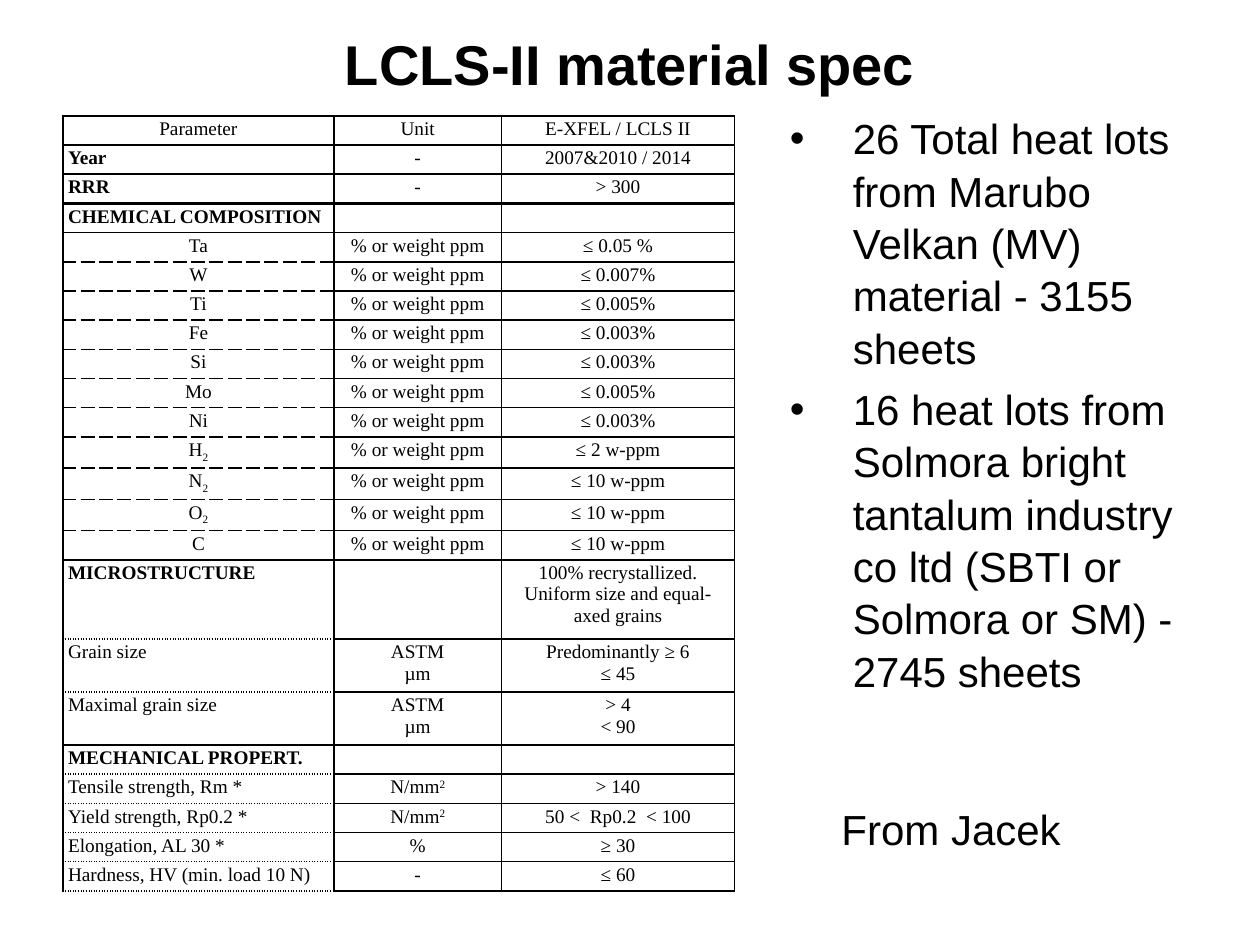
from lxml import etree
from pptx import Presentation
from pptx import util as u
from pptx.dml.color import RGBColor
from pptx.enum import text
from pptx.oxml import ns

BLACK = "000000"
ALIGN = text.PP_ALIGN


def color(value):
    return RGBColor.from_string(value)


def write(paragraph, words, size, name, bold=False):
    """Add a run; '~' starts a subscript and '^' a superscript."""
    mark = next((m for m in "~^" if m in words), None)
    base, _, script = words.partition(mark) if mark else (words, "", "")
    for part in filter(None, (base, script)):
        run = paragraph.add_run()
        run.text = part
        values = {"size": u.Pt(size), "name": name, "bold": bold}
        for key, value in values.items():
            setattr(run.font, key, value)
        run.font.color.rgb = color(BLACK)
        if part is script:
            shift = "-25000" if mark == "~" else "30000"
            run._r.get_or_add_rPr().set("baseline", shift)


presentation = Presentation()
presentation.slide_width, presentation.slide_height = u.Inches(10), u.Inches(7.5)
slide = presentation.slides.add_slide(presentation.slide_layouts[6])

# Title
title = slide.shapes.add_textbox(u.Inches(0.75), 0, u.Inches(8.5), u.Inches(1))
title.text_frame.word_wrap = True
title.text_frame.vertical_anchor = text.MSO_ANCHOR.MIDDLE
title.text_frame.paragraphs[0].alignment = ALIGN.CENTER
write(title.text_frame.paragraphs[0], "LCLS-II material spec", 32, "Arial", True)

# Specification rows: parameter, unit, requirement
limits = [
    ("Ta", "≤ 0.05 %"), ("W", "≤ 0.007%"), ("Ti", "≤ 0.005%"),
    ("Fe", "≤ 0.003%"), ("Si", "≤ 0.003%"), ("Mo", "≤ 0.005%"),
    ("Ni", "≤ 0.003%"), ("H~2", "≤ 2 w-ppm"), ("N~2", "≤ 10 w-ppm"),
    ("O~2", "≤ 10 w-ppm"), ("C", "≤ 10 w-ppm"),
]
rows = [
    ("Parameter", "Unit", "E-XFEL / LCLS II"),
    ("Year", "-", "2007&2010 / 2014"),
    ("RRR", "-", "> 300"),
    ("CHEMICAL COMPOSITION", "", ""),
    *[(element, "% or weight ppm", limit) for element, limit in limits],
    ("MICROSTRUCTURE", "",
     "100% recrystallized. Uniform size and equal-axed grains"),
    ("Grain size", "ASTM\nµm", "Predominantly ≥ 6\n≤ 45"),
    ("Maximal grain size", "ASTM\nµm", "> 4\n< 90"),
    ("MECHANICAL PROPERT.", "", ""),
    ("Tensile strength, Rm *", "N/mm^2", "> 140"),
    ("Yield strength, Rp0.2 *", "N/mm^2", "50 <  Rp0.2  < 100"),
    ("Elongation, AL 30 *", "%", "≥ 30"),
    ("Hardness, HV (min. load 10 N)", "-", "≤ 60"),
]
bold_rows = {1, 2, 3, 15, 18}
centered_rows = {0, *range(4, 15)}
thick_below = {0, 1, 2, 14, 17}
dashed_below = set(range(4, 14))
dotted_below = {15, 16, *range(18, 23)}
tall_rows = {15: 0.63, 16: 0.42, 17: 0.42}
table_height = 6.1
row_height = (table_height - sum(tall_rows.values())) / (len(rows) - len(tall_rows))

# Table
table = slide.shapes.add_table(
    len(rows), 3, u.Inches(0.5), u.Inches(0.92),
    u.Inches(5.33), u.Inches(table_height)).table
table.first_row = table.horz_banding = False
for column, width in zip(table.columns, (2.15, 1.33, 1.85)):
    column.width = u.Inches(width)

margins = {"margin_left": 0.04, "margin_right": 0.04,
           "margin_top": 0.02, "margin_bottom": 0.02}
for i, row in enumerate(rows):
    table.rows[i].height = u.Inches(tall_rows.get(i, row_height))
    for j, words in enumerate(row):
        cell = table.cell(i, j)
        for key, value in margins.items():
            setattr(cell, key, u.Inches(value))

        # Cell text
        for k, line in enumerate(words.split("\n")):
            frame = cell.text_frame
            paragraph = frame.add_paragraph() if k else frame.paragraphs[0]
            centered = j > 0 or i in centered_rows
            paragraph.alignment = ALIGN.CENTER if centered else ALIGN.JUSTIFY
            write(paragraph, line, 11, "Times New Roman", j == 0 and i in bold_rows)
            if not line:
                etree.SubElement(paragraph._p, ns.qn("a:endParaRPr"), sz="1100")

        # Cell borders: a row's top edge is the bottom edge of the row above
        properties = cell._tc.get_or_add_tcPr()
        for side, edge in (("L", None), ("R", None), ("T", i - 1), ("B", i)):
            weight = 1.5 if edge in thick_below else 1
            dash = "solid"
            if j == 0 and edge in dashed_below:
                dash = "dash"
            elif j == 0 and edge in dotted_below:
                dash = "sysDot"
            border = etree.SubElement(
                properties, ns.qn(f"a:ln{side}"), w=str(u.Pt(weight)))
            fill = etree.SubElement(border, ns.qn("a:solidFill"))
            etree.SubElement(fill, ns.qn("a:srgbClr"), val=BLACK)
            etree.SubElement(border, ns.qn("a:prstDash"), val=dash)
        cell.fill.background()

# Source note
note = slide.shapes.add_textbox(
    u.Inches(6.58), u.Inches(6.33), u.Inches(1.96), u.Inches(0.5))
note.text_frame.word_wrap = False
write(note.text_frame.paragraphs[0], "From Jacek", 24, "Arial")

# Supplier bullets
suppliers = [
    "26 Total heat lots from Marubo Velkan (MV) material - 3155 sheets",
    "16 heat lots from Solmora bright tantalum industry co ltd "
    "(SBTI or Solmora or SM) - 2745 sheets",
]
body = slide.shapes.add_textbox(
    u.Inches(6.17), u.Inches(0.83), u.Inches(3.42), u.Inches(5.83))
body.text_frame.word_wrap = True
for i, words in enumerate(suppliers):
    frame = body.text_frame
    paragraph = frame.add_paragraph() if i else frame.paragraphs[0]
    paragraph.line_spacing = 1.04
    if i:
        paragraph.space_before = u.Pt(5)
    properties = paragraph._p.get_or_add_pPr()
    properties.set("marL", str(u.Inches(0.5)))
    properties.set("indent", str(u.Inches(-0.5)))
    etree.SubElement(properties, ns.qn("a:buFont"), typeface="Arial")
    etree.SubElement(properties, ns.qn("a:buChar"), char="•")
    write(paragraph, words, 24, "Arial")

presentation.save("out.pptx")
